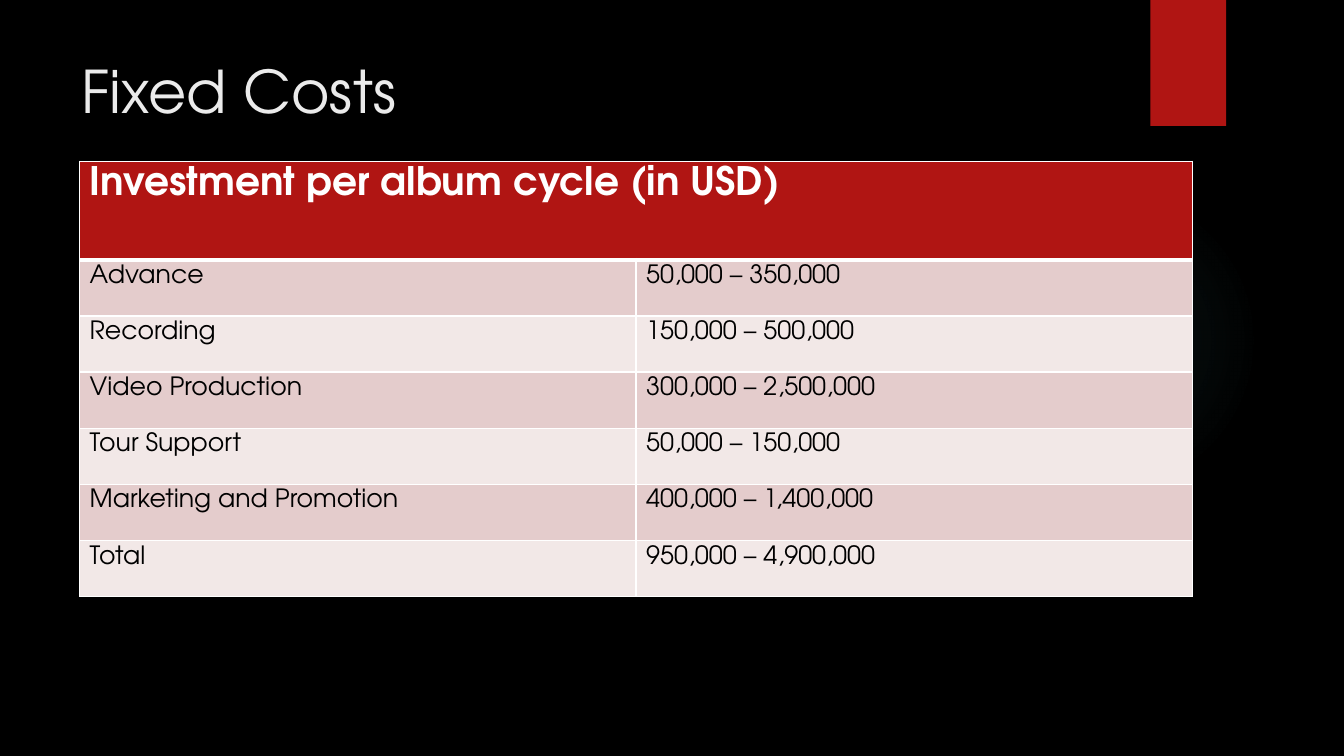
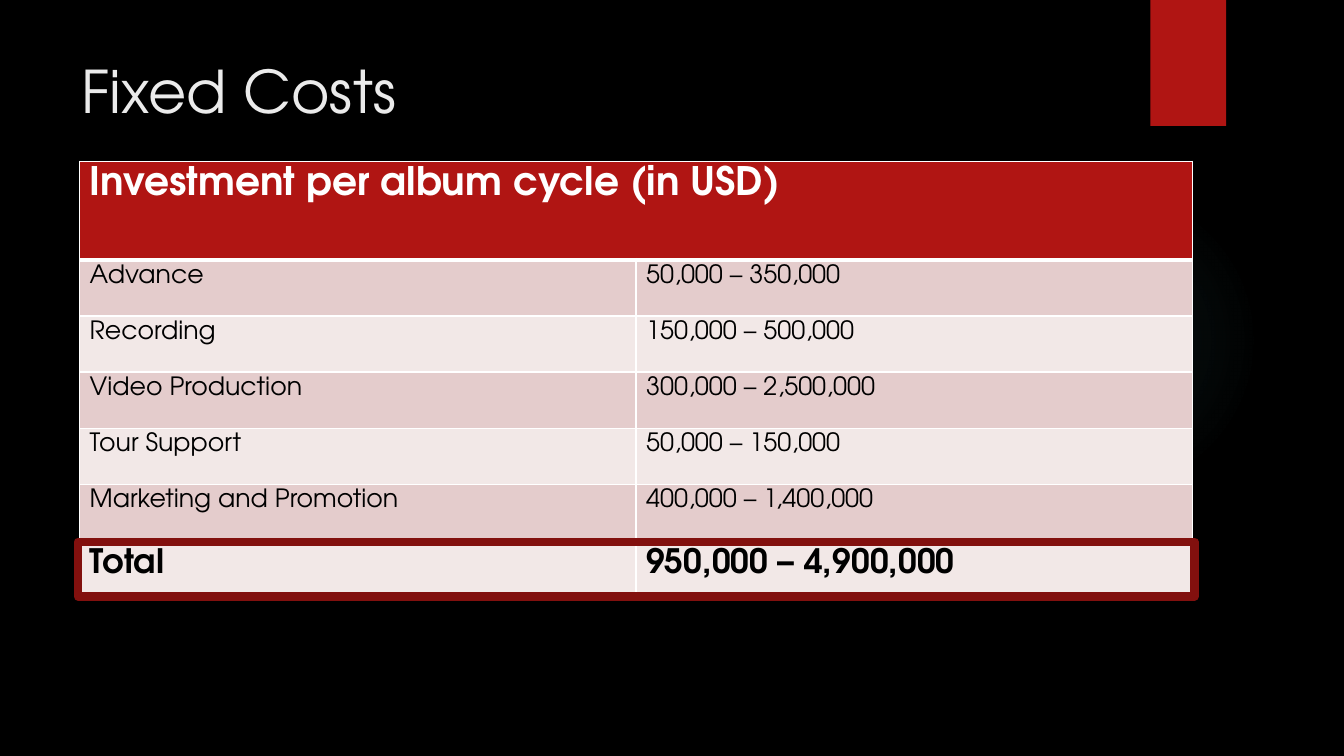
import dataclasses

import lxml.etree
import pptx
import pptx.dml.color
import pptx.enum.shapes
import pptx.enum.text
import pptx.oxml
import pptx.oxml.ns
import pptx.presentation
import pptx.shapes.autoshape
import pptx.slide
import pptx.table
import pptx.text.text
import pptx.util

Pt = pptx.util.Pt
RGBColor = pptx.dml.color.RGBColor

FONT = "TeX Gyre Adventor"
BLACK = RGBColor(0x00, 0x00, 0x00)
WHITE = RGBColor(0xFF, 0xFF, 0xFF)
TITLE_GREY = RGBColor(0xEB, 0xEB, 0xEB)
RED = RGBColor(0xB0, 0x15, 0x13)
DARK_RED = RGBColor(0x82, 0x10, 0x0E)
GLOW_TEAL = RGBColor(0x50, 0xB9, 0xC1)
ROW_FILLS = (RGBColor(0xE4, 0xCC, 0xCC), RGBColor(0xF2, 0xE8, 0xE7))
GLOW_STOPS = ((0, 7), (36, 6), (69, 0), (100, 0))

TITLE = "Fixed Costs"
HEADING = "Investment per album cycle (in USD)"
HEADING_HEIGHT = 70.4
ROW_HEIGHT = 40.1


@dataclasses.dataclass(frozen=True)
class Area:
    left: float
    top: float
    width: float
    height: float

    def lengths(self) -> tuple[int, int, int, int]:
        return Pt(self.left), Pt(self.top), Pt(self.width), Pt(self.height)


@dataclasses.dataclass(frozen=True)
class TextStyle:
    size: float
    color: RGBColor
    bold: bool = False
    margin_top: float = 3.6


@dataclasses.dataclass(frozen=True)
class Cost:
    label: str
    amount: str


COSTS = (
    Cost("Advance", "50,000 – 350,000"),
    Cost("Recording", "150,000 – 500,000"),
    Cost("Video Production", "300,000 – 2,500,000"),
    Cost("Tour Support", "50,000 – 150,000"),
    Cost("Marketing and Promotion", "400,000 – 1,400,000"),
    Cost("Total", "950,000 – 4,900,000"),
)

GLOW_AREA = Area(677.5, 131.8, 221.8, 221.8)
BAND_AREA = Area(821.8, 0, 54, 90)
TITLE_AREA = Area(51, 35.5, 741, 110)
TABLE_AREA = Area(56.9, 115.2, 794.9, HEADING_HEIGHT + ROW_HEIGHT * len(COSTS))
TOTAL_AREA = Area(55.6, 387.1, 797.8, 38.9)

TITLE_STYLE = TextStyle(42, TITLE_GREY)
HEADING_STYLE = TextStyle(28, WHITE, True)
BODY_STYLE = TextStyle(18, BLACK)
TOTAL_STYLE = TextStyle(24, BLACK, True, 6)


def write(frame: pptx.text.text.TextFrame, text: str, style: TextStyle) -> None:
    frame.text = text
    for span in frame.paragraphs[0].runs:
        span.font.name = FONT
        span.font.size = Pt(style.size)
        span.font.bold = style.bold
        span.font.color.rgb = style.color


def add_plain_shape(
    page: pptx.slide.Slide, kind: pptx.enum.shapes.MSO_SHAPE, area: Area
) -> pptx.shapes.autoshape.Shape:
    shape = page.shapes.add_shape(kind, *area.lengths())
    shape.shadow.inherit = False
    shape.fill.background()
    shape.line.fill.background()
    return shape


def add_glow(page: pptx.slide.Slide) -> None:
    glow = add_plain_shape(page, pptx.enum.shapes.MSO_SHAPE.OVAL, GLOW_AREA)
    stops = "".join(
        f'<a:gs pos="{position * 1000}"><a:srgbClr val="{GLOW_TEAL}">'
        f'<a:alpha val="{opacity * 1000}"/></a:srgbClr></a:gs>'
        for position, opacity in GLOW_STOPS
    )
    gradient = pptx.oxml.parse_xml(
        f'<a:gradFill {pptx.oxml.ns.nsdecls("a")}><a:gsLst>{stops}</a:gsLst>'
        '<a:path path="circle"><a:fillToRect l="50000" t="50000" r="50000" b="50000"/>'
        "</a:path></a:gradFill>"
    )
    properties = glow.element.spPr
    properties.replace(properties.find(pptx.oxml.ns.qn("a:noFill")), gradient)


def add_page(deck: pptx.presentation.Presentation) -> pptx.slide.Slide:
    page = deck.slides.add_slide(deck.slide_layouts[6])
    add_glow(page)
    band = add_plain_shape(page, pptx.enum.shapes.MSO_SHAPE.RECTANGLE, BAND_AREA)
    band.fill.solid()
    band.fill.fore_color.rgb = RED
    box = page.shapes.add_textbox(*TITLE_AREA.lengths())
    box.text_frame.word_wrap = True
    box.text_frame.vertical_anchor = pptx.enum.text.MSO_ANCHOR.TOP
    write(box.text_frame, TITLE, TITLE_STYLE)
    return page


def set_borders(cell: pptx.table._Cell, top: float, bottom: float) -> None:
    properties = cell._tc.get_or_add_tcPr()
    for side, width in (("L", 1), ("R", 1), ("T", top), ("B", bottom)):
        line = lxml.etree.SubElement(
            properties, pptx.oxml.ns.qn(f"a:ln{side}"), w=str(Pt(width))
        )
        fill = lxml.etree.SubElement(line, pptx.oxml.ns.qn("a:solidFill"))
        lxml.etree.SubElement(fill, pptx.oxml.ns.qn("a:srgbClr"), val=str(WHITE))


def style_cell(
    cell: pptx.table._Cell,
    color: RGBColor,
    style: TextStyle,
    top: float = 1,
    bottom: float = 1,
) -> None:
    set_borders(cell, top, bottom)
    cell.fill.solid()
    cell.fill.fore_color.rgb = color
    cell.vertical_anchor = pptx.enum.text.MSO_ANCHOR.TOP
    cell.margin_left = cell.margin_right = Pt(7.2)
    cell.margin_top = Pt(style.margin_top)
    cell.margin_bottom = Pt(0)


def add_cost_table(page: pptx.slide.Slide, total_style: TextStyle) -> None:
    frame = page.shapes.add_table(len(COSTS) + 1, 2, *TABLE_AREA.lengths())
    table = frame.table
    table.first_row = table.horz_banding = False
    for column in table.columns:
        column.width = Pt(TABLE_AREA.width / 2)
    for row in table.rows:
        row.height = Pt(ROW_HEIGHT)
    table.rows[0].height = Pt(HEADING_HEIGHT)

    table.cell(0, 0).merge(table.cell(0, 1))
    for column_index in range(2):
        style_cell(table.cell(0, column_index), RED, HEADING_STYLE, bottom=3)
    write(table.cell(0, 0).text_frame, HEADING, HEADING_STYLE)

    for index, cost in enumerate(COSTS):
        style = total_style if cost is COSTS[-1] else BODY_STYLE
        for column_index, text in enumerate((cost.label, cost.amount)):
            cell = table.cell(index + 1, column_index)
            style_cell(cell, ROW_FILLS[index % 2], style, top=3 if index == 0 else 1)
            write(cell.text_frame, text, style)


def add_total_frame(page: pptx.slide.Slide) -> None:
    outline = add_plain_shape(page, pptx.enum.shapes.MSO_SHAPE.RECTANGLE, TOTAL_AREA)
    outline.line.color.rgb = DARK_RED
    outline.line.width = Pt(6)
    lxml.etree.SubElement(outline.line._ln, pptx.oxml.ns.qn("a:round"))


def main() -> None:
    deck = pptx.Presentation()
    deck.slide_width, deck.slide_height = Pt(960), Pt(540)
    background = deck.slide_master.background.fill
    background.solid()
    background.fore_color.rgb = BLACK

    add_cost_table(add_page(deck), BODY_STYLE)

    total_page = add_page(deck)
    add_cost_table(total_page, TOTAL_STYLE)
    add_total_frame(total_page)

    deck.save("out.pptx")


if __name__ == "__main__":
    main()
